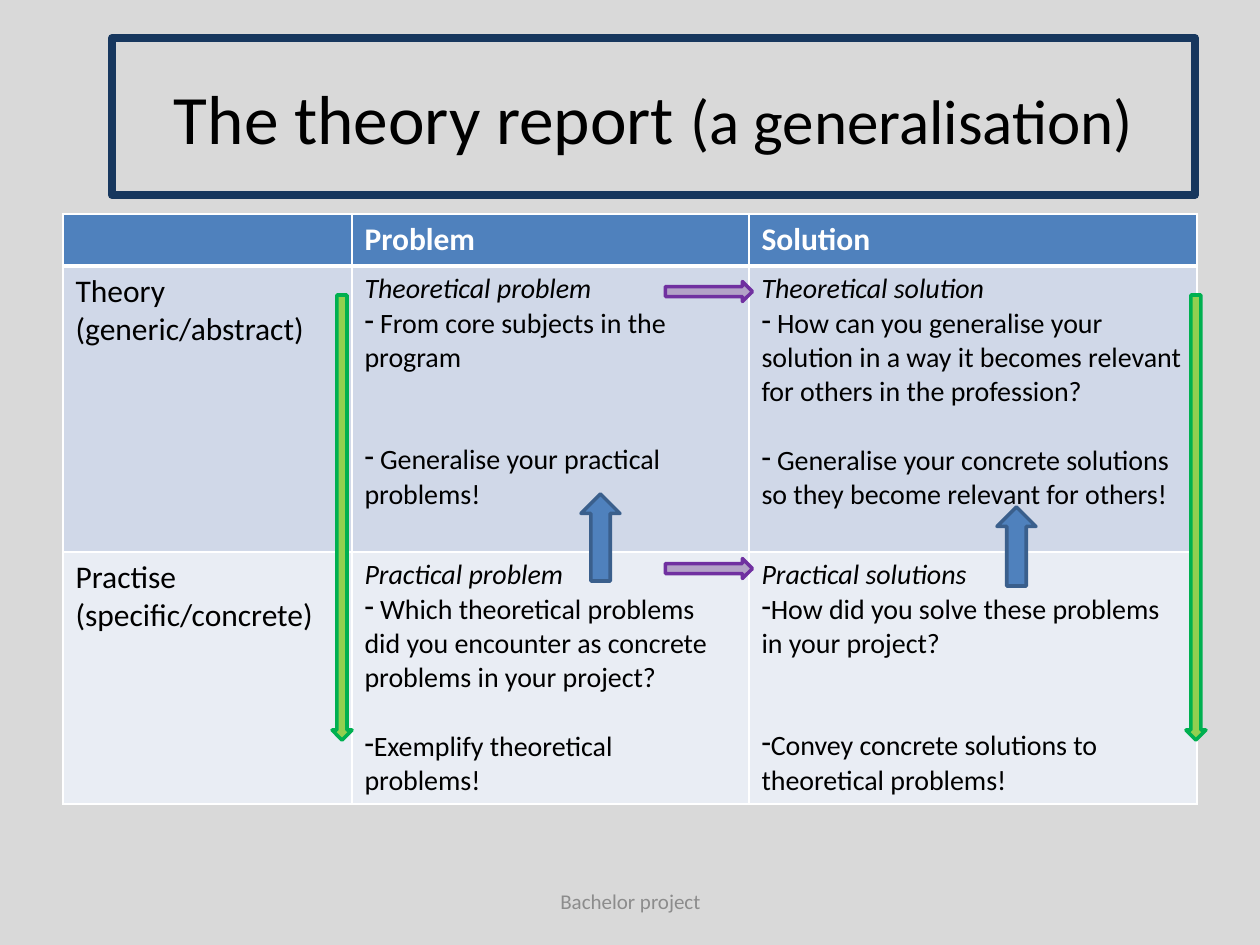
from dataclasses import dataclass

from lxml.etree import SubElement
from pptx import Presentation
from pptx.dml.color import RGBColor
from pptx.enum.shapes import MSO_SHAPE as Shape
from pptx.enum.text import MSO_ANCHOR as Anchor, PP_ALIGN as Align
from pptx.oxml.ns import qn
from pptx.util import Emu, Pt

EMU_PER_PX = 914400 / 126
FONT = "Calibri"
LINE_HEIGHT = 19.5  # points, one line of 16 pt text


@dataclass
class Line:
    text: str
    size: float = 16
    italic: bool = False
    bold: bool = False
    bullet: bool = False
    gap_lines: int = 0


@dataclass
class Arrow:
    left: int
    top: int
    width: int
    height: int
    rotation: int
    fill: str
    outline: str


def px(value: int) -> Emu:
    return Emu(round(value * EMU_PER_PX))


def colour(value: str) -> RGBColor:
    return RGBColor.from_string(value)


def format_run(run, size: float, value: str, bold=False, italic=False) -> None:
    run.font.name = FONT
    run.font.size = Pt(size)
    run.font.color.rgb = colour(value)
    run.font.bold = bold
    run.font.italic = italic


def heading(text: str) -> Line:
    return Line(text, italic=True)


def point(text: str, gap_lines: int = 0) -> Line:
    return Line(text, bullet=True, gap_lines=gap_lines)


def label(*texts: str) -> list[Line]:
    return [Line(text, size=18) for text in texts]


def column_title(text: str) -> list[Line]:
    return [Line(text, size=18, bold=True)]


def set_borders(cell, bottom_width: int) -> None:
    properties = cell._tc.get_or_add_tcPr()
    for side in "LRTB":
        width = bottom_width if side == "B" else 1
        border = SubElement(properties, qn(f"a:ln{side}"), w=str(Pt(width)))
        fill = SubElement(border, qn("a:solidFill"))
        SubElement(fill, qn("a:srgbClr"), val="FFFFFF")


def fill_cell(cell, lines: list[Line], text_colour: str) -> None:
    text_frame = cell.text_frame
    text_frame.text = "\n".join(line.text for line in lines)
    for paragraph, line in zip(text_frame.paragraphs, lines):
        if line.gap_lines:
            paragraph.space_before = Pt(line.gap_lines * LINE_HEIGHT)
        if line.bullet:
            properties = paragraph._p.get_or_add_pPr()
            properties.set("marL", "0")
            properties.set("indent", "0")
            SubElement(properties, qn("a:buChar"), char="-")
        for run in paragraph.runs:
            format_run(run, line.size, text_colour, line.bold, line.italic)


def draw_arrow(slide, arrow: Arrow) -> None:
    shape = slide.shapes.add_shape(
        Shape.DOWN_ARROW, px(arrow.left), px(arrow.top), px(arrow.width), px(arrow.height))
    shape.shadow.inherit = False
    shape.rotation = arrow.rotation
    shape.fill.solid()
    shape.fill.fore_color.rgb = colour(arrow.fill)
    shape.line.color.rgb = colour(arrow.outline)
    shape.line.width = Pt(2)


COLUMN_WIDTHS = [289, 397, 448]
ROW_HEIGHTS = [52, 286, 252]
ROW_FILLS = ["4F81BD", "D0D8E8", "E9EDF4"]
ROWS = [
    [[], column_title("Problem"), column_title("Solution")],
    [
        label("Theory", "(generic/abstract)"),
        [heading("Theoretical problem"),
         point(" From core subjects in the program"),
         point(" Generalise your practical problems!", 2)],
        [heading("Theoretical solution"),
         point(" How can you generalise your solution in a way it becomes "
               "relevant for others in the profession?"),
         point(" Generalise your concrete solutions so they become "
               "relevant for others!", 1)],
    ],
    [
        label("Practise", "(specific/concrete)"),
        [heading("Practical problem"),
         point(" Which theoretical problems did you encounter as concrete "
               "problems in your project?"),
         point("Exemplify theoretical problems!", 1)],
        [heading("Practical solutions"),
         point("How did you solve these problems in your project?"),
         point("Convey concrete solutions to theoretical problems!", 2)],
    ],
]

BLUE = ("4F81BD", "3A5F8C")
GREEN = ("92D050", "00B050")
PURPLE = ("B3A2C7", "7030A0")
ARROWS = [
    # Practice to theory
    Arrow(581, 494, 39, 87, 180, *BLUE),
    Arrow(997, 507, 39, 79, 180, *BLUE),
    # Theory to practice
    Arrow(332, 295, 20, 445, 0, *GREEN),
    Arrow(1186, 295, 20, 445, 0, *GREEN),
    # Problem to solution
    Arrow(699, 248, 20, 87, 270, *PURPLE),
    Arrow(699, 525, 20, 87, 270, *PURPLE),
]


def draw_title(slide) -> None:
    title = slide.shapes.add_shape(Shape.RECTANGLE, px(112), px(38), px(1083), px(157))
    title.shadow.inherit = False
    title.fill.background()
    title.line.color.rgb = colour("17375E")
    title.line.width = Pt(4.5)
    title.text_frame.word_wrap = True
    title.text_frame.vertical_anchor = Anchor.MIDDLE
    paragraph = title.text_frame.paragraphs[0]
    paragraph.alignment = Align.CENTER
    for text, size in [("The theory report ", 39.6), ("(a generalisation)", 36)]:
        run = paragraph.add_run()
        run.text = text
        format_run(run, size, "000000")


def draw_table(slide) -> None:
    table = slide.shapes.add_table(
        len(ROWS), len(COLUMN_WIDTHS), px(63), px(214),
        px(sum(COLUMN_WIDTHS)), px(sum(ROW_HEIGHTS))).table
    table.horz_banding = False
    for column, width in zip(table.columns, COLUMN_WIDTHS):
        column.width = px(width)
    for row_index, row in enumerate(ROWS):
        table.rows[row_index].height = px(ROW_HEIGHTS[row_index])
        is_header = row_index == 0
        for column_index, lines in enumerate(row):
            cell = table.cell(row_index, column_index)
            set_borders(cell, 3 if is_header else 1)
            cell.fill.solid()
            cell.fill.fore_color.rgb = colour(ROW_FILLS[row_index])
            fill_cell(cell, lines, "FFFFFF" if is_header else "000000")
            if column_index == 1:
                cell.margin_right = px(24)


def draw_footer(slide) -> None:
    footer = slide.shapes.add_textbox(px(431), px(876), px(399), px(50))
    footer.text_frame.word_wrap = True
    footer.text_frame.vertical_anchor = Anchor.MIDDLE
    footer.text_frame.text = "Bachelor project"
    paragraph = footer.text_frame.paragraphs[0]
    paragraph.alignment = Align.CENTER
    format_run(paragraph.runs[0], 12, "8C8C8C")


def main() -> None:
    presentation = Presentation()
    presentation.slide_width = px(1260)
    presentation.slide_height = px(945)
    slide = presentation.slides.add_slide(presentation.slide_layouts[6])
    slide.background.fill.solid()
    slide.background.fill.fore_color.rgb = colour("D9D9D9")

    draw_title(slide)
    draw_table(slide)
    draw_footer(slide)
    for arrow in ARROWS:
        draw_arrow(slide, arrow)
    presentation.save("out.pptx")


if __name__ == "__main__":
    main()
